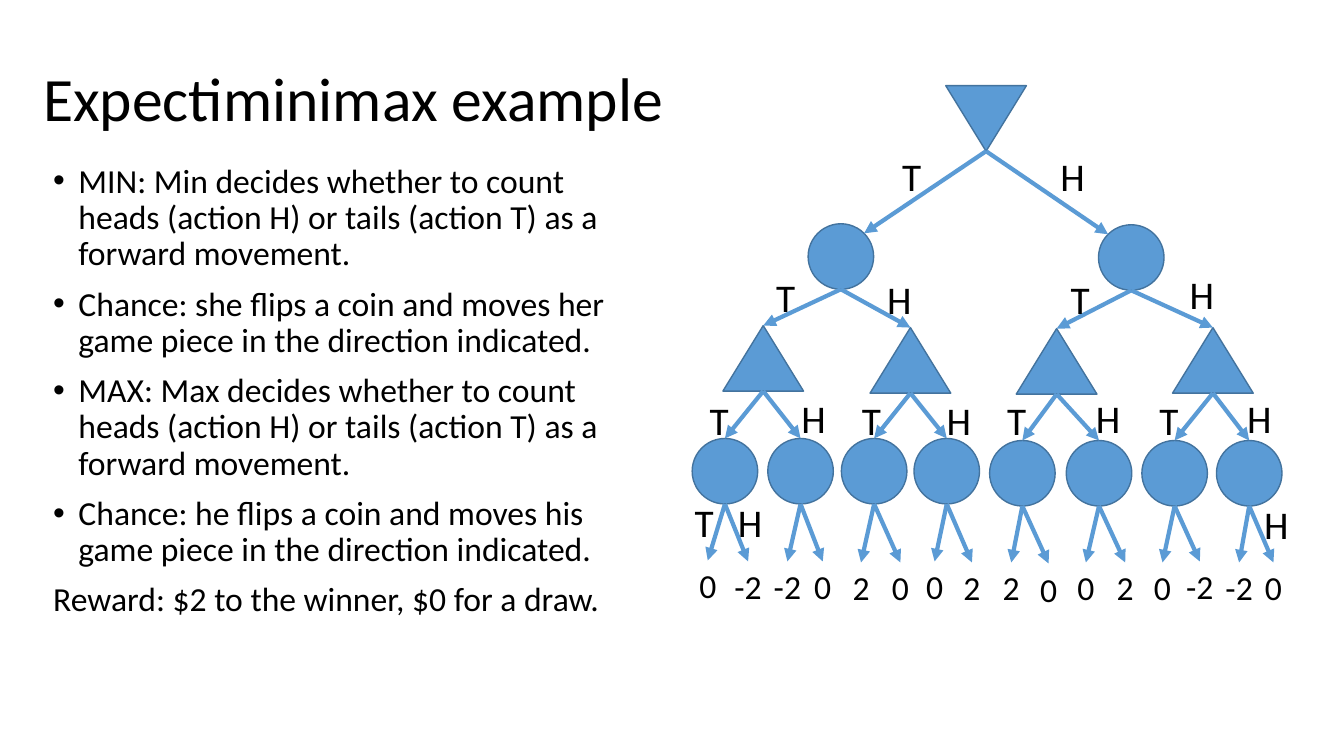
from math import sqrt

from lxml import etree
from pptx import Presentation
from pptx.dml.color import RGBColor
from pptx.enum.shapes import MSO_CONNECTOR, MSO_SHAPE
from pptx.enum.text import MSO_ANCHOR, PP_ALIGN
from pptx.oxml.ns import qn
from pptx.util import Inches, Pt

CIRCLE = MSO_SHAPE.OVAL
TRIANGLE = MSO_SHAPE.ISOSCELES_TRIANGLE
STRAIGHT = MSO_CONNECTOR.STRAIGHT
TOP, MIDDLE = MSO_ANCHOR.TOP, MSO_ANCHOR.MIDDLE
LEFT, CENTER = PP_ALIGN.LEFT, PP_ALIGN.CENTER

COLORS = {"text": "000000", "node": "5B9BD5", "outline": "43739E"}
FONT = "Calibri"
NODE_HEIGHT = 0.65
NODE_WIDTHS = {CIRCLE: 0.65, TRIANGLE: 0.8}
DIAGONAL = NODE_HEIGHT / 2 / sqrt(2)  # offset from a circle's centre to its 45° point

# Game tree, one row per level: (centre x, top)
MIN_NODE = (9.78, 0.85)
CHANCE_NODES = [(8.34, 2.22), (11.22, 2.23)]
MAX_NODES = [(7.57, 3.23), (9.03, 3.25), (10.48, 3.26), (12.03, 3.25)]
LAST_CHANCE_NODES = [(7.19, 4.35), (7.94, 4.35), (8.67, 4.35), (9.39, 4.35),
                     (10.14, 4.37), (10.9, 4.37), (11.65, 4.37), (12.39, 4.37)]

# Leaves: (centre x, top, reward)
LEAVES = [(7.02, 5.56, "0"), (7.42, 5.57, "-2"), (7.81, 5.57, "-2"), (8.16, 5.57, "0"),
          (8.54, 5.58, "2"), (8.93, 5.58, "0"), (9.27, 5.57, "0"), (9.64, 5.58, "2"),
          (10.03, 5.58, "2"), (10.4, 5.59, "0"), (10.77, 5.58, "0"), (11.16, 5.58, "2"),
          (11.53, 5.58, "0"), (11.9, 5.57, "-2"), (12.29, 5.58, "-2"), (12.63, 5.58, "0")]

# Left and top of the letters beside the branches
BRANCH_LABELS = {
    "T": [(8.85, 1.46), (7.6, 2.66), (10.52, 2.68), (6.94, 3.88), (8.45, 3.88),
          (9.89, 3.88), (11.4, 3.88), (6.79, 4.89)],
    "H": [(10.42, 1.46), (8.7, 2.68), (11.7, 2.63), (7.85, 3.86), (9.29, 3.88),
          (10.77, 3.86), (12.27, 3.86), (7.22, 4.89), (12.44, 4.91)],
}

RULES = [
    "MIN: Min decides whether to count heads (action H) or tails (action T) as a forward movement.",
    "Chance: she flips a coin and moves her game piece in the direction indicated.",
    "MAX: Max decides whether to count heads (action H) or tails (action T) as a forward movement.",
    "Chance: he flips a coin and moves his game piece in the direction indicated.",
]
REWARD_RULE = "Reward: $2 to the winner, $0 for a draw."


class SlideBuilder:
    def __init__(self, slide):
        self.shapes = slide.shapes

    def text(self, left, top, width, height, lines, size, align=LEFT, anchor=TOP,
             line_spacing=1.0, space_before=0):
        box = self.shapes.add_textbox(Inches(left), Inches(top), Inches(width), Inches(height))
        frame = box.text_frame
        frame.word_wrap = True
        frame.vertical_anchor = anchor
        frame.text = "\n".join(lines)
        for paragraph in frame.paragraphs:
            paragraph.alignment = align
            paragraph.line_spacing = line_spacing
            paragraph.space_before = Pt(space_before)
            paragraph.font.name = FONT
            paragraph.font.size = Pt(size)
            paragraph.font.color.rgb = RGBColor.from_string(COLORS["text"])
        return frame.paragraphs

    def bullet(self, paragraph):
        properties = paragraph._p.get_or_add_pPr()
        properties.set("marL", str(Inches(0.25)))
        properties.set("indent", str(Inches(-0.25)))
        font = etree.Element(qn("a:buFont"), typeface="Arial")
        character = etree.Element(qn("a:buChar"), char="•")
        position = properties.index(properties.find(qn("a:defRPr")))
        properties[position:position] = [font, character]

    def node(self, kind, center, top, rotation=0):
        width = NODE_WIDTHS[kind]
        shape = self.shapes.add_shape(kind, Inches(center - width / 2), Inches(top),
                                      Inches(width), Inches(NODE_HEIGHT))
        shape.rotation = rotation
        shape.shadow.inherit = False
        shape.fill.solid()
        shape.fill.fore_color.rgb = RGBColor.from_string(COLORS["node"])
        shape.line.color.rgb = RGBColor.from_string(COLORS["outline"])
        shape.line.width = Pt(1)
        return shape

    def arrow(self, start, end, target=None):
        connector = self.shapes.add_connector(STRAIGHT, *(Inches(n) for n in start + end))
        if target is not None:
            connector.end_connect(target, 0)
        connector.line.color.rgb = RGBColor.from_string(COLORS["node"])
        connector.line.width = Pt(3)
        etree.SubElement(connector.line._get_or_add_ln(), qn("a:tailEnd"), type="triangle")
        etree.SubElement(connector._element.spPr, qn("a:effectLst"))


def draw_tree(builder):
    # Nodes
    builder.node(TRIANGLE, *MIN_NODE, rotation=180)
    for place in CHANCE_NODES:
        builder.node(CIRCLE, *place)
    max_shapes = [builder.node(TRIANGLE, *place) for place in MAX_NODES]
    last_chance_shapes = [builder.node(CIRCLE, *place) for place in LAST_CHANCE_NODES]

    # Branches from MIN meet the circles at their inner 45° points
    for side, (center, top) in zip((1, -1), CHANCE_NODES):
        end = (center + side * DIAGONAL, top + NODE_HEIGHT / 2 - DIAGONAL)
        builder.arrow((MIN_NODE[0], MIN_NODE[1] + NODE_HEIGHT), end)

    # Every other node branches into two children, from its bottom to their tops
    leaf_tips = [(center, top) for center, top, _ in LEAVES]
    for parents, children, targets in (
        (CHANCE_NODES, MAX_NODES, max_shapes),
        (MAX_NODES, LAST_CHANCE_NODES, last_chance_shapes),
        (LAST_CHANCE_NODES, leaf_tips, [None] * len(LEAVES)),
    ):
        for index, (child, target) in enumerate(zip(children, targets)):
            center, top = parents[index // 2]
            builder.arrow((center, top + NODE_HEIGHT), child, target)

    # Rewards and branch letters
    for center, top, reward in LEAVES:
        builder.text(center - 0.25, top, 0.5, 0.5, [reward], 24, align=CENTER)
    for letter, places in BRANCH_LABELS.items():
        for left, top in places:
            builder.text(left, top, 0.37, 0.57, [letter], 28)


def main():
    presentation = Presentation()
    presentation.slide_width = Inches(13.33)
    presentation.slide_height = Inches(7.5)
    builder = SlideBuilder(presentation.slides.add_slide(presentation.slide_layouts[6]))

    # Title and rules of the game
    builder.text(0.33, 0.28, 7.58, 1.45, ["Expectiminimax example"], 44,
                 anchor=MIDDLE, line_spacing=0.9)
    paragraphs = builder.text(0.43, 1.58, 5.9, 5.64, RULES + [REWARD_RULE], 24,
                              line_spacing=0.9, space_before=10)
    for paragraph in paragraphs[:len(RULES)]:
        builder.bullet(paragraph)

    draw_tree(builder)
    presentation.save("out.pptx")


if __name__ == "__main__":
    main()
